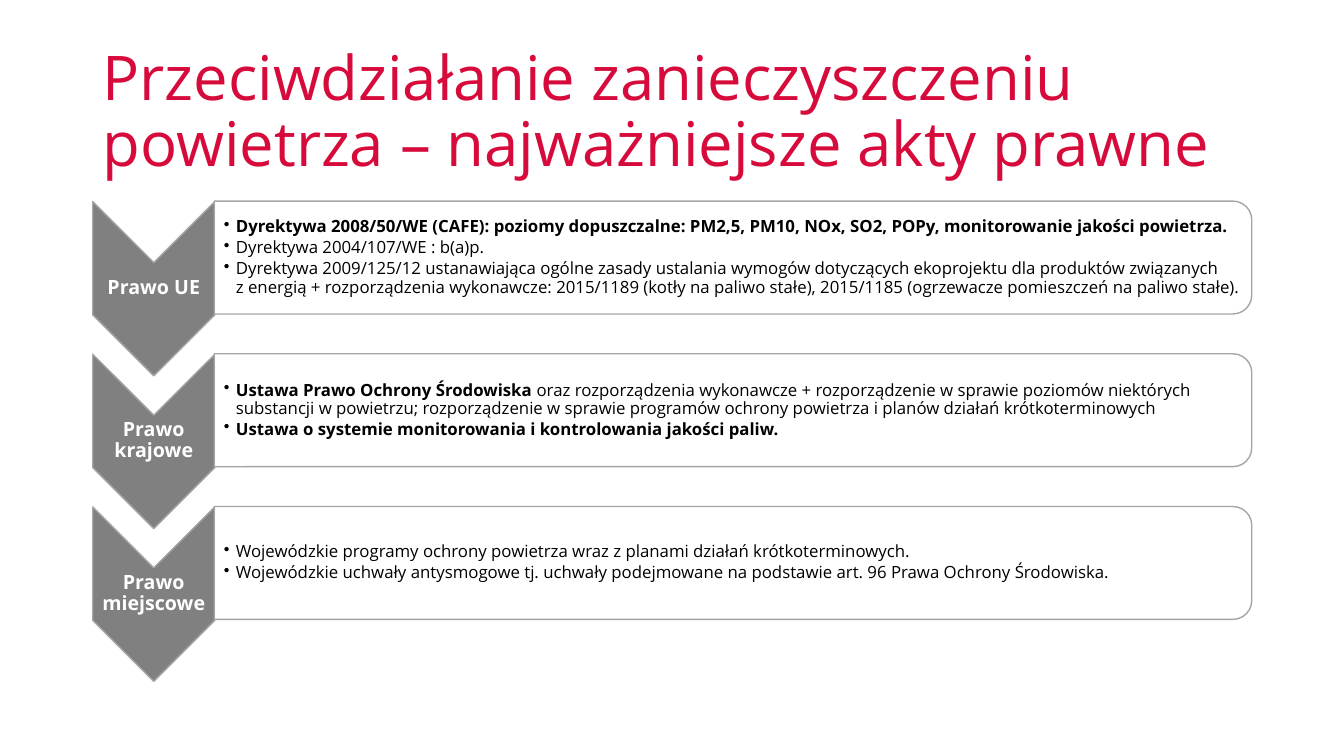
from lxml.etree import SubElement
from pptx import Presentation
from pptx.dml.color import RGBColor
from pptx.enum.shapes import MSO_SHAPE as Preset
from pptx.enum.text import MSO_ANCHOR as Anchor, PP_ALIGN as Align
from pptx.oxml.ns import qn
from pptx.util import Inches, Pt

FONT = "Open Sans"
RED, GREY, LINE_GREY, WHITE, BLACK = "D70B3B", "808080", "A5A5A5", "FFFFFF", "000000"
FIRST_TOP, ROW_PITCH = 2.0, 3.03 / 2

TITLE = "Przeciwdziałanie zanieczyszczeniu powietrza – najważniejsze akty prawne"

# Each row: label and bullets; each bullet is a list of (text, bold) runs
ROWS = [
    ("Prawo UE", [
        [("Dyrektywa 2008/50/WE (CAFE): poziomy dopuszczalne: PM2,5, PM10, NOx, SO2, POPy, "
          "monitorowanie jakości powietrza.", True)],
        [("Dyrektywa 2004/107/WE : b(a)p.", False)],
        [("Dyrektywa 2009/125/12 ustanawiająca ogólne zasady ustalania wymogów dotyczących "
          "ekoprojektu dla produktów związanych \nz energią + rozporządzenia wykonawcze: "
          "2015/1189 (kotły na paliwo stałe), 2015/1185 (ogrzewacze pomieszczeń na paliwo "
          "stałe).", False)],
    ]),
    ("Prawo krajowe", [
        [("Ustawa Prawo Ochrony Środowiska ", True),
         ("oraz rozporządzenia wykonawcze + rozporządzenie w sprawie poziomów niektórych "
          "substancji w powietrzu; rozporządzenie w sprawie programów ochrony powietrza "
          "i planów działań krótkoterminowych", False)],
        [("Ustawa o systemie monitorowania i kontrolowania jakości paliw.", True)],
    ]),
    ("Prawo miejscowe", [
        [("Wojewódzkie programy ochrony powietrza wraz z planami działań "
          "krótkoterminowych.", False)],
        [("Wojewódzkie uchwały antysmogowe tj. uchwały podejmowane na podstawie art. 96 "
          "Prawa Ochrony Środowiska.", False)],
    ]),
]


def color(hex_string):
    return RGBColor.from_string(hex_string)


def add_turned_shape(slide, preset, box, fill, opacity=None):
    """Add an outlined preset shape turned by 90 degrees."""
    shape = slide.shapes.add_shape(preset, *map(Inches, box))
    shape.rotation = 90
    shape.shadow.inherit = False
    shape.fill.solid()
    shape.fill.fore_color.rgb = color(fill)
    if opacity is not None:
        fill_color = shape._element.spPr.find(qn("a:solidFill"))[0]
        SubElement(fill_color, qn("a:alpha"), val=str(opacity * 1000))
    shape.line.color.rgb = color(LINE_GREY)
    shape.line.width = Pt(1)


def add_text_frame(slide, box, margins):
    """Add a wrapping, vertically centred text box."""
    frame = slide.shapes.add_textbox(*map(Inches, box)).text_frame
    frame.word_wrap = True
    frame.vertical_anchor = Anchor.MIDDLE
    (frame.margin_left, frame.margin_top,
     frame.margin_right, frame.margin_bottom) = map(Inches, margins)
    return frame


def style(paragraph, size, font_color, bold=None):
    paragraph.line_spacing = 0.9
    font = paragraph.font
    font.name, font.size, font.bold = FONT, Pt(size), bold
    font.color.rgb = color(font_color)


def add_label(slide, box, text):
    paragraph = add_text_frame(slide, box, [0.01] * 4).paragraphs[0]
    paragraph.text = text
    paragraph.alignment = Align.CENTER
    style(paragraph, 14, WHITE, True)


def add_bullets(slide, box, bullets):
    frame = add_text_frame(slide, box, [0.09, 0.01, 0.01, 0.01])
    for index, runs in enumerate(bullets):
        paragraph = frame.add_paragraph() if index else frame.paragraphs[0]
        paragraph.space_after = Pt(2)
        properties = paragraph._p.get_or_add_pPr()
        properties.set("marL", str(Inches(0.12)))
        properties.set("indent", str(-Inches(0.12)))
        SubElement(properties, qn("a:buChar"), char="•")
        style(paragraph, 12, BLACK)
        for text, bold in runs:
            for number, line in enumerate(text.split("\n")):
                if number:
                    paragraph.add_line_break()
                run = paragraph.add_run()
                run.text = line
                run.font.bold = bold


def add_row(slide, top, label, bullets):
    """Add a chevron with its label and the panel of legal acts beside it."""
    add_turned_shape(slide, Preset.CHEVRON, (0.66, top + 0.26, 1.73, 1.21), GREY)
    add_label(slide, (0.92, top + 0.6, 1.21, 0.52), label)
    add_turned_shape(slide, Preset.ROUND_2_SAME_RECTANGLE,
                     (6.71, top - 4.59, 1.12, 10.29), WHITE, 90)
    add_bullets(slide, (2.13, top + 0.05, 10.24, 1.01), bullets)


def main():
    presentation = Presentation()
    presentation.slide_width, presentation.slide_height = Inches(13.33), Inches(7.5)
    slide = presentation.slides.add_slide(presentation.slide_layouts[6])

    # Title
    title = add_text_frame(slide, (0.92, 0.4, 11.5, 1.45), (0.1, 0.05, 0.1, 0.05))
    title.paragraphs[0].text = TITLE
    style(title.paragraphs[0], 44, RED)

    # Levels of law
    for index, (label, bullets) in enumerate(ROWS):
        add_row(slide, FIRST_TOP + index * ROW_PITCH, label, bullets)

    presentation.save("out.pptx")


if __name__ == "__main__":
    main()
